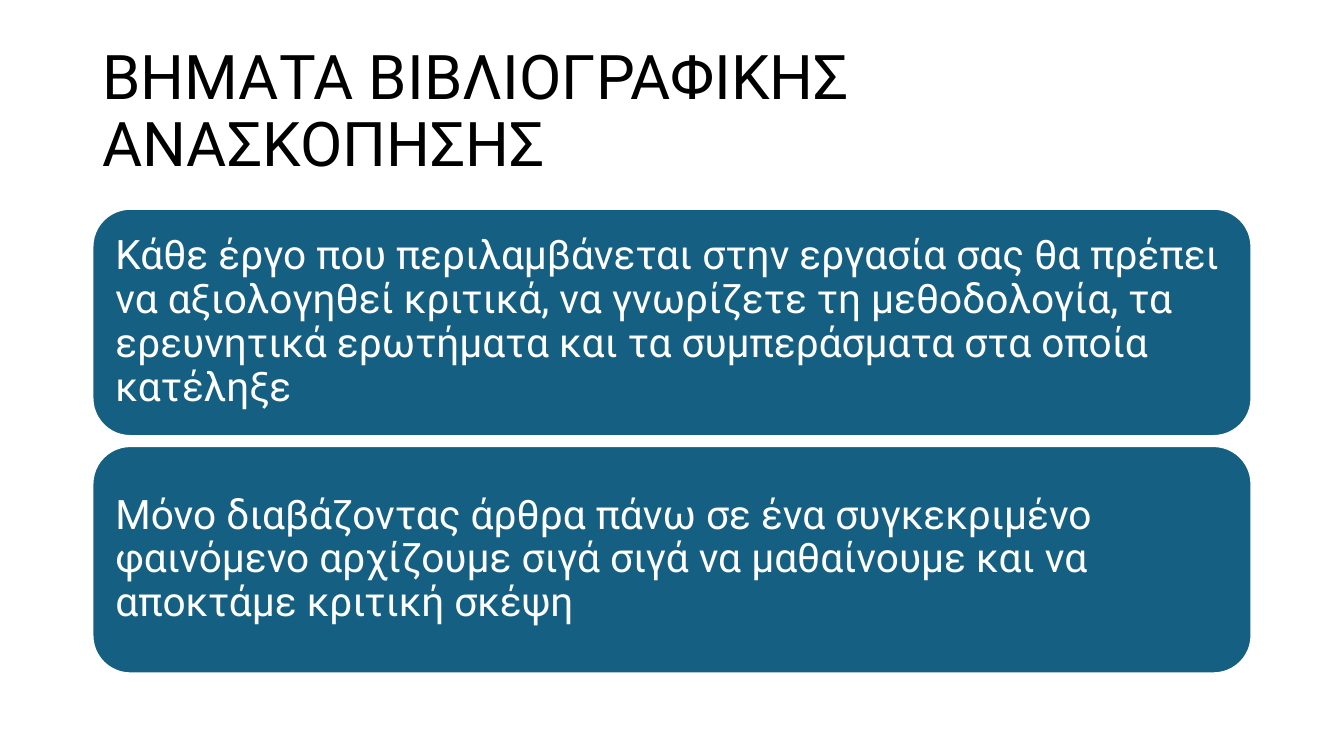
from dataclasses import dataclass

from pptx import Presentation
from pptx.dml.color import RGBColor
from pptx.enum.shapes import MSO_SHAPE
from pptx.enum.text import MSO_ANCHOR, PP_ALIGN
from pptx.util import Cm, Pt

ROUND = MSO_SHAPE.ROUNDED_RECTANGLE
MIDDLE = MSO_ANCHOR.MIDDLE
LEFT = PP_ALIGN.LEFT


@dataclass(frozen=True)
class Theme:
    font: str = "Roboto"
    ink: RGBColor = RGBColor(0x00, 0x00, 0x00)
    paper: RGBColor = RGBColor(0xFF, 0xFF, 0xFF)
    teal: RGBColor = RGBColor(0x15, 0x60, 0x82)
    title: int = 44
    body: int = 29
    edge: float = 1.5


THEME = Theme()
TITLE = "ΒΗΜΑΤΑ ΒΙΒΛΙΟΓΡΑΦΙΚΗΣ ΑΝΑΣΚΟΠΗΣΗΣ"
STEPS = [
    "Κάθε έργο που περιλαμβάνεται στην εργασία σας θα πρέπει να αξιολογηθεί "
    "κριτικά, να γνωρίζετε τη μεθοδολογία, τα ερευνητικά ερωτήματα και τα "
    "συμπεράσματα στα οποία κατέληξε",
    "Μόνο διαβάζοντας άρθρα πάνω σε ένα συγκεκριμένο φαινόμενο αρχίζουμε "
    "σιγά σιγά να μαθαίνουμε και να αποκτάμε κριτική σκέψη",
]


def write(shape, text, size, color):
    """Fill the shape with one left-aligned, vertically centred paragraph."""
    frame = shape.text_frame
    frame.text = text
    frame.word_wrap = True
    frame.vertical_anchor = MIDDLE
    line = frame.paragraphs[0]
    line.alignment = LEFT
    line.line_spacing = 0.9
    font = line.runs[0].font
    font.name = THEME.font
    font.size = Pt(size)
    font.color.rgb = color


def add_title(slide, left, top, width, height):
    box = slide.shapes.add_textbox(Cm(left), Cm(top), Cm(width), Cm(height))
    write(box, TITLE, THEME.title, THEME.ink)


def add_steps(slide, left, top, width, height, gap=0.25, pad=0.3):
    """Stack the steps as equal cards that share the given box."""
    tall = (height - gap * (len(STEPS) - 1)) / len(STEPS)
    for i, step in enumerate(STEPS):
        card = slide.shapes.add_shape(
            ROUND, Cm(left), Cm(top + i * (tall + gap)), Cm(width), Cm(tall))
        card.shadow.inherit = False
        card.fill.solid()
        card.fill.fore_color.rgb = THEME.teal
        card.line.color.rgb = THEME.paper
        card.line.width = Pt(THEME.edge)
        write(card, step, THEME.body, THEME.paper)
        frame = card.text_frame
        frame.margin_left = frame.margin_right = Cm(pad)
        frame.margin_top = frame.margin_bottom = Cm(pad)


def main():
    deck = Presentation()
    deck.slide_width, deck.slide_height = Cm(33.87), Cm(19.05)
    slide = deck.slides.add_slide(deck.slide_layouts[6])
    left, width = 2.33, 29.21
    add_title(slide, left, 1.01, width, 3.68)
    add_steps(slide, left, 5.26, width, 11.71)
    deck.save("out.pptx")


if __name__ == "__main__":
    main()
